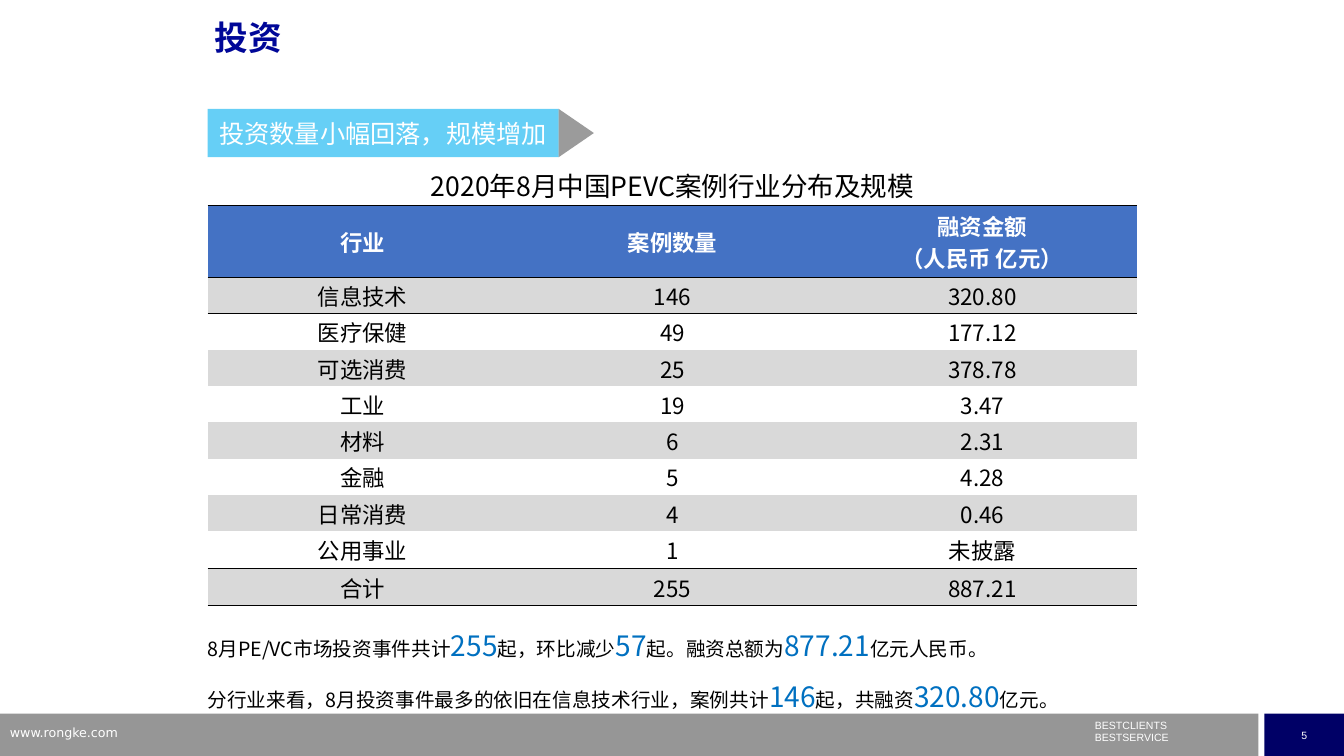
from dataclasses import dataclass

from lxml import etree
from pptx import Presentation
from pptx import util as u
from pptx.dml.color import RGBColor
from pptx.enum import shapes, text
from pptx.oxml.ns import qn


@dataclass(frozen=True)
class Theme:
    cjk: str = "Noto Sans CJK SC"
    latin: str = "Arial"
    web: str = "DejaVu Sans"
    white: str = "FFFFFF"
    black: str = "000000"
    title: str = "000798"
    accent: str = "0070C0"
    banner: str = "00B0F0"
    arrow: str = "595959"
    header: str = "4472C4"
    band: str = "D9D9D9"
    footer: str = "969696"
    page: str = "000066"
    title_size: float = 24
    highlight_size: float = 20
    caption_size: float = 19
    banner_size: float = 18
    table_size: float = 16
    body_size: float = 14
    web_size: float = 9
    footer_size: float = 7.5


THEME = Theme()
ALIGN = text.PP_ALIGN
MIDDLE = text.MSO_ANCHOR.MIDDLE
CAPTION = "2020年8月中国PEVC案例行业分布及规模"
HEADINGS = ("行业", "案例数量", "融资金额\v（人民币 亿元）")
INDUSTRIES = (
    ("信息技术", "146", "320.80"),
    ("医疗保健", "49", "177.12"),
    ("可选消费", "25", "378.78"),
    ("工业", "19", "3.47"),
    ("材料", "6", "2.31"),
    ("金融", "5", "4.28"),
    ("日常消费", "4", "0.46"),
    ("公用事业", "1", "未披露"),
    ("合计", "255", "887.21"),
)
SUMMARY = (
    "8月PE/VC市场投资事件共计|255|起，环比减少|57|起。融资总额为|877.21|亿元人民币。\n"
    "分行业来看，8月投资事件最多的依旧在信息技术行业，案例共计|146|起，共融资|320.80|亿元。"
)


def write(frame, content, size, color=THEME.black, font=THEME.cjk, bold=False,
          align=ALIGN.LEFT, line_spacing=None, space_before=0):
    """Fill a text frame; text between bars is highlighted."""
    for index, line in enumerate(content.split("\n")):
        paragraph = frame.paragraphs[0] if index == 0 else frame.add_paragraph()
        paragraph.alignment = align
        if line_spacing:
            paragraph.line_spacing = line_spacing
        if index and space_before:
            paragraph.space_before = u.Pt(space_before)
        for part, words in enumerate(line.split("|")):
            highlighted = part % 2 == 1
            for piece, chunk in enumerate(words.split("\v")):
                if piece:
                    paragraph.add_line_break()
                run = paragraph.add_run()
                run.text = chunk
                run.font.name = font
                run.font.bold = bold
                run.font.size = u.Pt(THEME.highlight_size if highlighted else size)
                run.font.color.rgb = RGBColor.from_string(
                    THEME.accent if highlighted else color)
                east_asian = etree.Element(qn("a:ea"), typeface=THEME.cjk)
                run.font._element.find(qn("a:latin")).addnext(east_asian)


def inches(box):
    return [u.Inches(length) for length in box]


def set_margins(target, left, top, right, bottom):
    target.margin_left, target.margin_top = u.Inches(left), u.Inches(top)
    target.margin_right, target.margin_bottom = u.Inches(right), u.Inches(bottom)


def add_block(parent, kind, box, color, opacity=None):
    shape = parent.add_shape(kind, *inches(box))
    shape.shadow.inherit = False
    shape.fill.solid()
    shape.fill.fore_color.rgb = RGBColor.from_string(color)
    shape.line.fill.background()
    shape.text_frame.vertical_anchor = MIDDLE
    if opacity:
        tint = shape._element.spPr.find(qn("a:solidFill"))[0]
        etree.SubElement(tint, qn("a:alpha"), val=str(opacity * 1000))
    return shape


def add_text(slide, box, content, **style):
    frame = slide.shapes.add_textbox(*inches(box)).text_frame
    frame.word_wrap = True
    write(frame, content, **style)
    return frame


def add_title(slide, box, content):
    title = slide.shapes.title
    title.left, title.top, title.width, title.height = inches(box)
    title.text_frame.vertical_anchor = text.MSO_ANCHOR.TOP
    write(title.text_frame, content, THEME.title_size, THEME.title, THEME.latin,
          bold=True, line_spacing=0.9)


def add_footer(slide, box):
    left, top, width, height = box
    page_width = 0.79
    rectangle = shapes.MSO_SHAPE.RECTANGLE
    add_block(slide.shapes, rectangle, (left, top, width - 0.85, height), THEME.footer)
    page = add_block(slide.shapes, rectangle,
                     (left + width - page_width, top, page_width, height), THEME.page)
    small = dict(size=THEME.footer_size, color=THEME.white, font=THEME.latin)
    write(page.text_frame, "5", align=ALIGN.CENTER, **small)
    add_text(slide, (left + 10.76, top + 0.06, 2, 0.3), "BESTCLIENTS\nBESTSERVICE",
             line_spacing=0.5, space_before=3.75, **small)
    add_text(slide, (left, top + 0.06, 3.2, 0.26), "www.rongke.com",
             size=THEME.web_size, color=THEME.white, font=THEME.web)


def add_banner(slide, box, content):
    left, top, width, height = box
    group = slide.shapes.add_group_shape().shapes
    label = add_block(group, shapes.MSO_SHAPE.RECTANGLE, box, THEME.banner, 60)
    write(label.text_frame, content, THEME.banner_size, THEME.white, align=ALIGN.CENTER)
    depth = 0.35
    arrow_box = (left + width + (depth - height) / 2, top + (height - depth) / 2,
                 height, depth)
    arrow = add_block(group, shapes.MSO_SHAPE.ISOSCELES_TRIANGLE, arrow_box,
                      THEME.arrow, 60)
    arrow.rotation = 90


def set_border(cell, side):
    """Draw a black rule on side lnT or lnB; call lnT before lnB and the fill."""
    line = etree.SubElement(cell._tc.get_or_add_tcPr(), qn(f"a:{side}"),
                            w=str(u.Pt(1)))
    fill = etree.SubElement(line, qn("a:solidFill"))
    etree.SubElement(fill, qn("a:srgbClr"), val=THEME.black)


def add_industry_table(slide, box):
    rows = ((CAPTION, "", ""), HEADINGS, *INDUSTRIES)
    heights = (0.41, 0.71) + (0.36,) * 7 + (0.37,) * 2
    ruled = {0, 1, len(rows) - 2, len(rows) - 1}
    table = slide.shapes.add_table(len(rows), 3, *inches(box)).table
    table.first_row = table.horz_banding = False
    no_style = "{2D5ABB26-0587-4C30-8999-92F81FD0307C}"
    table._tbl.tblPr.find(qn("a:tableStyleId")).text = no_style
    for column in table.columns:
        column.width = u.Inches(box[2] / 3)
    for index, (values, height) in enumerate(zip(rows, heights)):
        table.rows[index].height = u.Inches(height)
        heading = index == 1
        for column, value in enumerate(values):
            cell = table.cell(index, column)
            cell.vertical_anchor = MIDDLE
            set_margins(cell, 0.01, 0.01, 0.01, 0)
            if value:
                write(cell.text_frame, value,
                      THEME.table_size if index else THEME.caption_size,
                      THEME.white if heading else THEME.black,
                      bold=heading, align=ALIGN.CENTER)
            if index - 1 in ruled:
                set_border(cell, "lnT")
            if index in ruled:
                set_border(cell, "lnB")
            if heading or (index and index % 2 == 0):
                cell.fill.solid()
                cell.fill.fore_color.rgb = RGBColor.from_string(
                    THEME.header if heading else THEME.band)
            else:
                cell.fill.background()
    table.cell(0, 0).merge(table.cell(0, 2))


def add_summary(slide, box):
    frame = add_text(slide, box, SUMMARY, size=THEME.body_size,
                     align=ALIGN.JUSTIFY, line_spacing=1.5)
    set_margins(frame, 0, 0, 0, 0)


def main():
    presentation = Presentation()
    presentation.slide_width, presentation.slide_height = inches((13.33, 7.5))
    slide = presentation.slides.add_slide(presentation.slide_layouts[5])
    add_footer(slide, (0, 7.08, 13.33, 0.42))
    add_banner(slide, (2.06, 1.08, 3.48, 0.48), "投资数量小幅回落，规模增加")
    add_summary(slide, (2.06, 6.07, 9.22, 0.95))
    add_title(slide, (2.03, 0.16, 9, 0.7), "投资")
    add_industry_table(slide, (2.06, 1.63, 9.22, 4.36))
    presentation.save("out.pptx")


if __name__ == "__main__":
    main()
